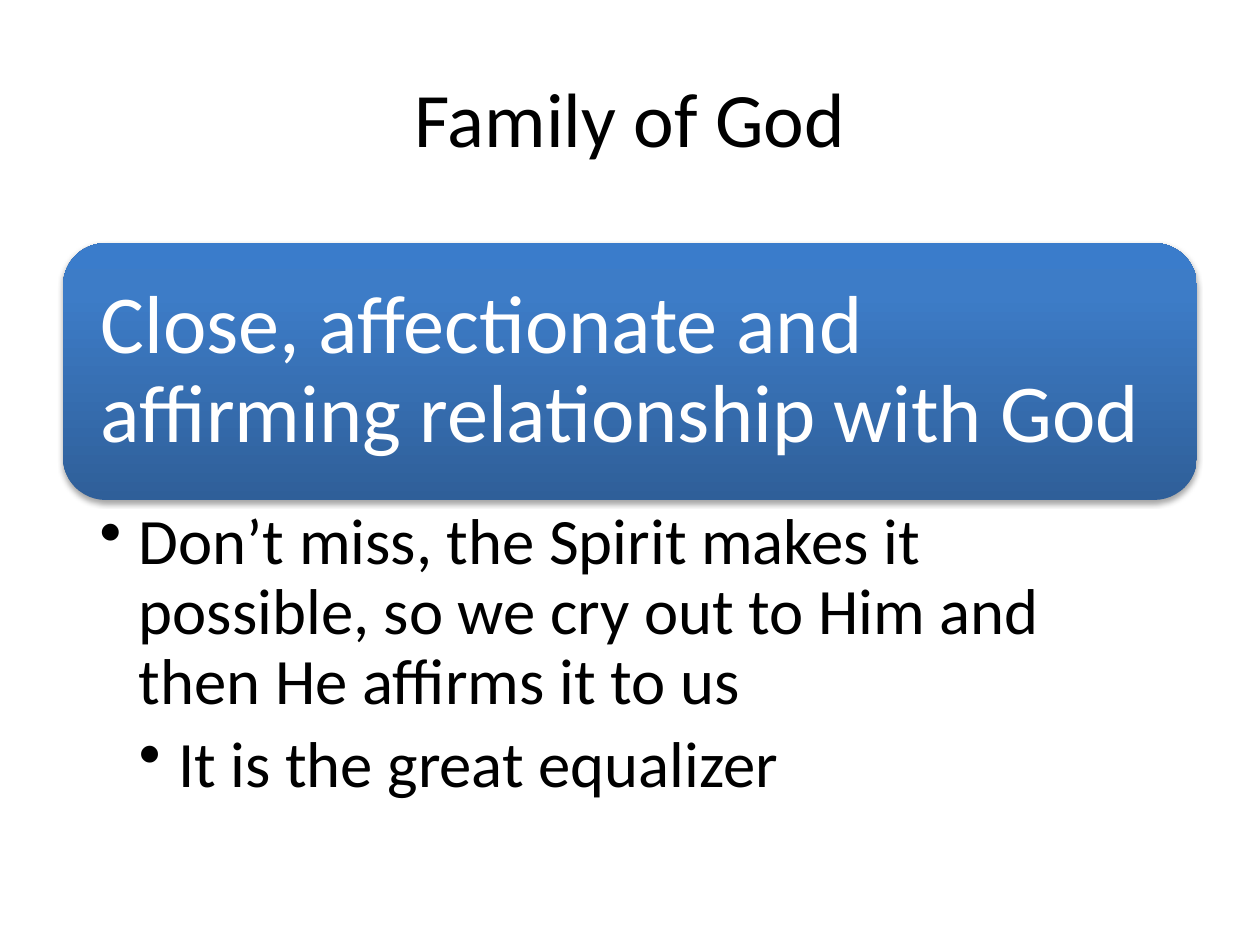
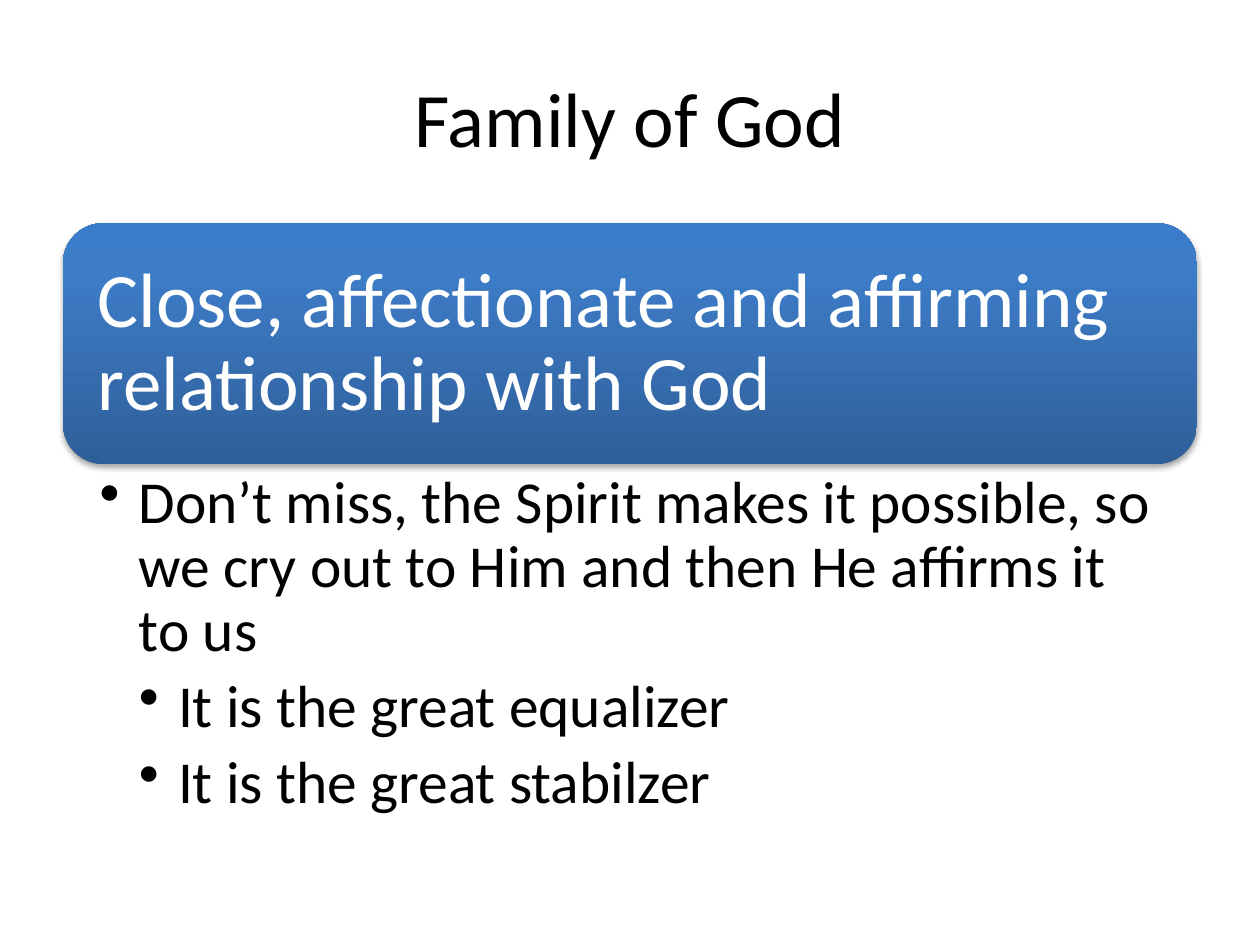
from lxml import etree
from pptx import Presentation
from pptx.dml.color import RGBColor
from pptx.enum.shapes import MSO_SHAPE
from pptx.enum.text import MSO_ANCHOR, PP_ALIGN
from pptx.oxml.ns import qn
from pptx.util import Cm, Pt

ROUNDED = MSO_SHAPE.ROUNDED_RECTANGLE
MIDDLE, TOP = MSO_ANCHOR.MIDDLE, MSO_ANCHOR.TOP
LEFT, CENTER = PP_ALIGN.LEFT, PP_ALIGN.CENTER

FONT = "Calibri"
BLACK, WHITE = "000000", "FFFFFF"
GRADIENT = [(0, "2F5F99"), (80, "3D7CC7"), (100, "3A7CCB")]
MARGIN, WIDTH = Cm(1.27), Cm(22.86)
INDENT = Cm(0.79)

TITLE = "Family of God"
BANNER = "Close, affectionate and affirming relationship with God"
POINT = "Don’t miss, the Spirit makes it possible, so we cry out to Him and then He affirms it to us"

# Lengths in cm, text sizes in points
SLIDES = [
    dict(top=4.9, height=5.18, inset=0.51, banner_size=47,
         list_height=6.48, list_size=37, list_insets=(0.74, 0.18, 0.94, 0.18),
         subpoints=["It is the great equalizer"]),
    dict(top=4.5, height=4.86, inset=0.46, banner_size=44,
         list_height=7.59, list_size=34, list_insets=(0.74, 0.15, 0.86, 0.15),
         subpoints=["It is the great equalizer", "It is the great stabilzer"]),
]


def rgb(color):
    return RGBColor.from_string(color)


def write(shape, lines, size, color, anchor, align, insets, spacing=1.0):
    tf = shape.text_frame
    tf.word_wrap = True
    tf.vertical_anchor = anchor
    tf.margin_left, tf.margin_top, tf.margin_right, tf.margin_bottom = [Cm(i) for i in insets]
    tf.text = "\n".join(lines)
    for p in tf.paragraphs:
        p.alignment = align
        p.line_spacing = spacing
        font = p.runs[0].font
        font.name, font.size = FONT, Pt(size)
        font.color.rgb = rgb(color)
    return tf


prs = Presentation()
prs.slide_width, prs.slide_height = Cm(25.4), Cm(19.05)

for item in SLIDES:
    s = prs.slides.add_slide(prs.slide_layouts[6])

    # Title
    title = s.shapes.add_textbox(MARGIN, Cm(0.76), WIDTH, Cm(3.18))
    write(title, [TITLE], 44, BLACK, MIDDLE, CENTER, (0.25, 0.13, 0.25, 0.13))

    # Banner
    sp = s.shapes.add_shape(ROUNDED, MARGIN, Cm(item["top"]), WIDTH, Cm(item["height"]))
    sp.line.fill.background()
    sp.fill.gradient()
    sp.fill.gradient_angle = 90
    write(sp, [BANNER], item["banner_size"], WHITE, MIDDLE, LEFT, [item["inset"]] * 4, 0.9)

    # Banner gradient stops
    stops = sp.element.spPr.find(".//" + qn("a:gsLst"))
    stops.clear()
    for position, color in GRADIENT:
        stop = etree.SubElement(stops, qn("a:gs"), pos=str(position * 1000))
        etree.SubElement(stop, qn("a:srgbClr"), val=color)

    # Banner shadow
    sp.shadow.inherit = False
    effects = sp.element.spPr.find(qn("a:effectLst"))
    shadow = etree.SubElement(effects, qn("a:outerShdw"), blurRad=str(Pt(3.1)),
                              dist=str(Pt(1.8)), dir="5400000", rotWithShape="0")
    shade = etree.SubElement(shadow, qn("a:srgbClr"), val=BLACK)
    etree.SubElement(shade, qn("a:alpha"), val="35000")

    # Bulleted list directly below the banner
    box = s.shapes.add_textbox(MARGIN, sp.top + sp.height, WIDTH, Cm(item["list_height"]))
    tf = write(box, [POINT] + item["subpoints"], item["list_size"], BLACK, TOP, LEFT,
               item["list_insets"], 0.9)
    for i, p in enumerate(tf.paragraphs):
        p.level = 1 if i == 0 else 2
        p.space_after = Pt(0.2 * item["list_size"])
        pPr = p._p.get_or_add_pPr()
        pPr.set("marL", str(p.level * INDENT))
        pPr.set("indent", str(-INDENT))
        etree.SubElement(pPr, qn("a:buChar"), char="•")

prs.save("out.pptx")
